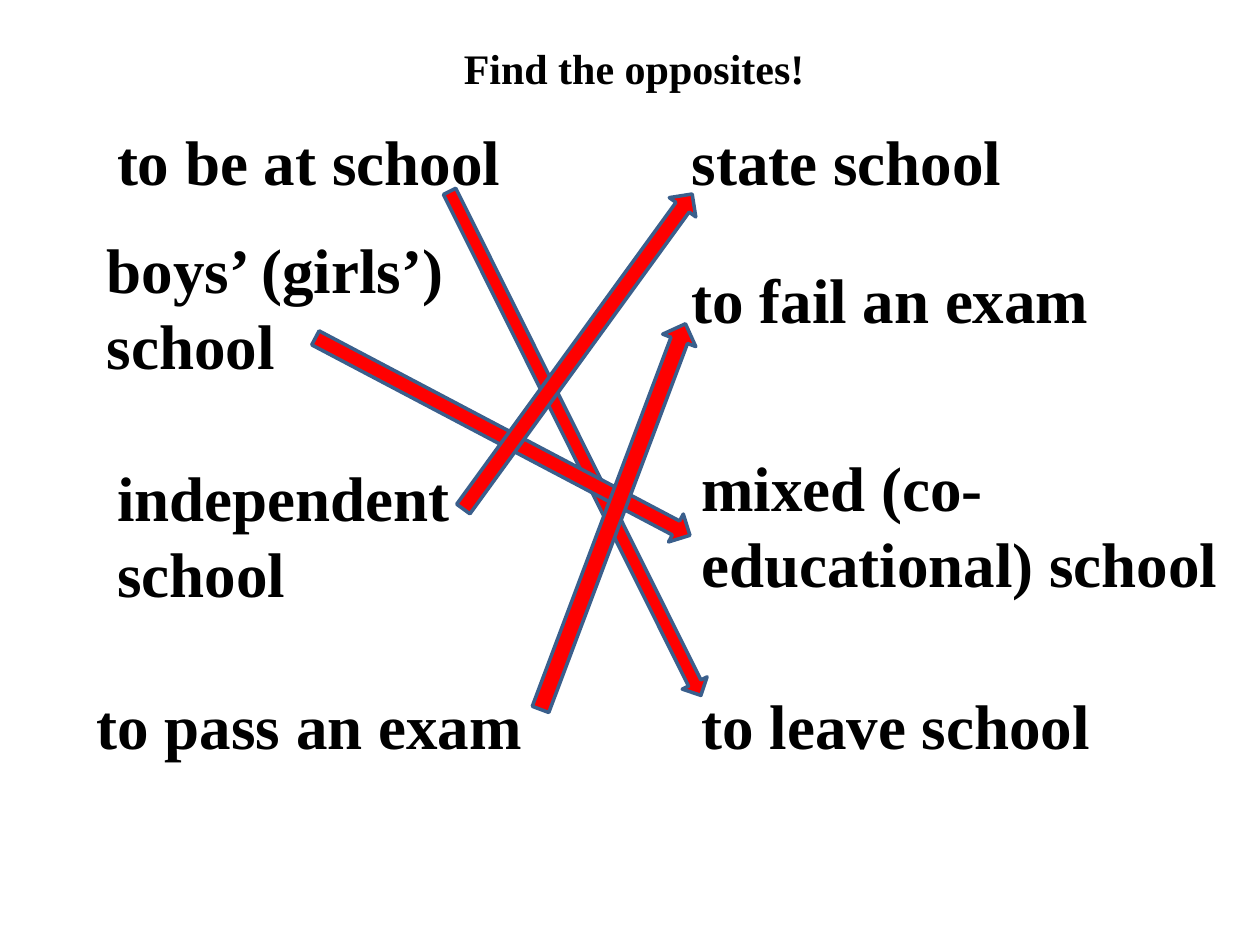
from pptx import Presentation
from pptx.dml.color import RGBColor
from pptx.enum.shapes import MSO_SHAPE
from pptx.enum.text import MSO_ANCHOR, MSO_AUTO_SIZE, PP_ALIGN
from pptx.util import Pt

COLORS = {"text": "000000", "arrow": "FF0000", "outline": "3A5F8C"}


def fill_text(sp, text, size, wrap=True):
    tf = sp.text_frame
    tf.text = text
    tf.word_wrap = wrap
    tf.auto_size = MSO_AUTO_SIZE.NONE
    tf.vertical_anchor = MSO_ANCHOR.TOP
    for p in tf.paragraphs:
        p.alignment = PP_ALIGN.LEFT
        for r in p.runs:
            r.font.name = "Times New Roman"
            r.font.size = Pt(size)
            r.font.bold = True
            r.font.color.rgb = RGBColor.from_string(COLORS["text"])


prs = Presentation()
prs.slide_width, prs.slide_height = Pt(720), Pt(540)
s = prs.slides.add_slide(prs.slide_layouts[5])

title = s.shapes.title
title.left, title.top, title.width, title.height = Pt(257.8), Pt(20.9), Pt(272), Pt(36)
fill_text(title, "Find the opposites!", 24)

phrases = [
    ("to pass an exam", 48.2, 388.8, 260, 51, False),
    ("to fail an exam", 388.1, 145.4, 244, 51, False),
    ("to be at school", 59.8, 66.2, 238.3, 51, True),
    ("boys’ (girls’)\nschool", 54, 128.2, 334.8, 94.3, True),
    ("independent school", 59.8, 258.5, 289.4, 94.3, True),
    ("state school", 388.1, 66.2, 209.5, 51, True),
    ("to leave school", 393.8, 388.8, 254.9, 51, True),
    ("mixed (co-\neducational) school", 393.8, 252.7, 374.4, 94.3, True),
]
for text, x, y, w, h, wrap in phrases:
    sp = s.shapes.add_textbox(Pt(x), Pt(y), Pt(w), Pt(h))
    fill_text(sp, text, 36, wrap)

arrows = [
    (167.8, 245.5, 321.8, 15.8, 63.5),
    (166.3, 240.5, 241.9, 18, 27.8),
    (218.9, 191.5, 222.5, 18.7, 306),
    (232.6, 285.1, 235.4, 20.2, 290.6),
]
for x, y, w, h, angle in arrows:
    sp = s.shapes.add_shape(MSO_SHAPE.RIGHT_ARROW, Pt(x), Pt(y), Pt(w), Pt(h))
    sp.rotation = angle
    sp.shadow.inherit = False
    sp.fill.solid()
    sp.fill.fore_color.rgb = RGBColor.from_string(COLORS["arrow"])
    sp.line.color.rgb = RGBColor.from_string(COLORS["outline"])
    sp.line.width = Pt(2)

prs.save("out.pptx")
